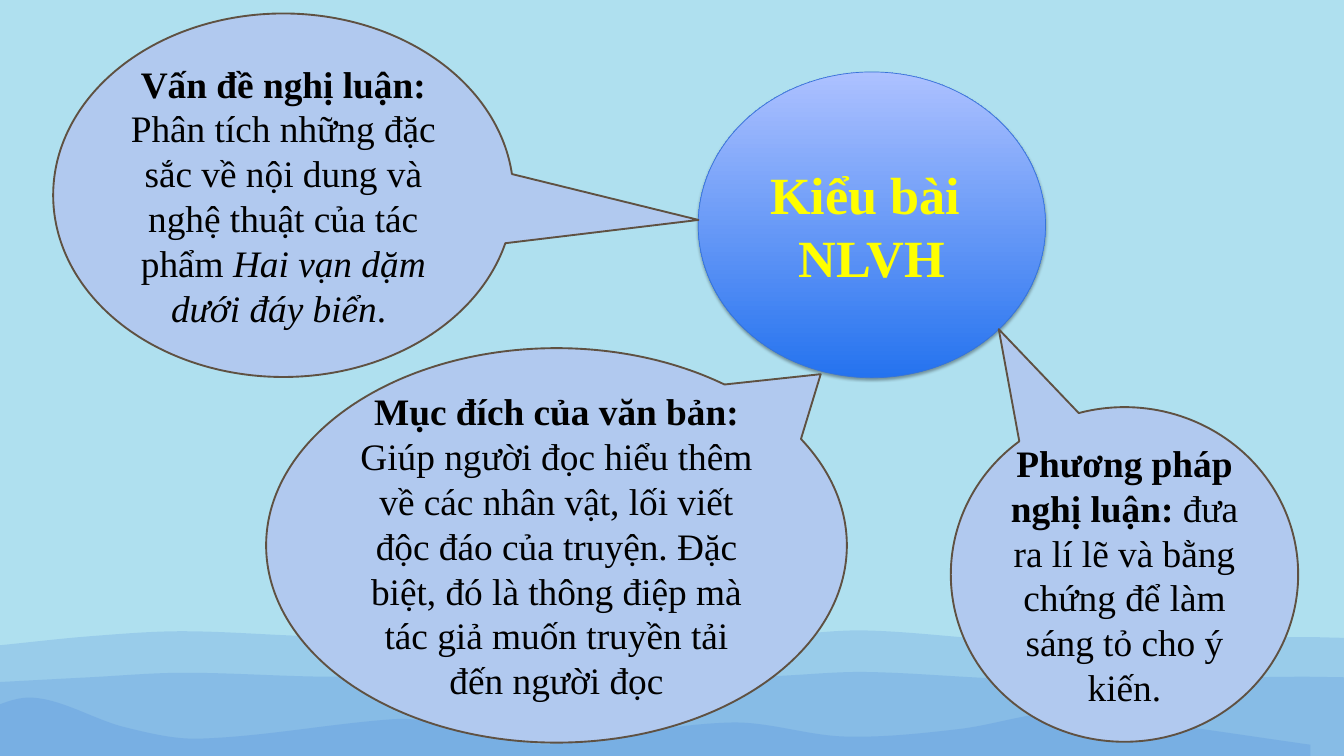
from lxml import etree
from pptx import Presentation
from pptx.dml.color import RGBColor
from pptx.enum import shapes as sh, text as tx
from pptx.oxml import parse_xml
from pptx.oxml.ns import nsdecls, qn
from pptx.util import Cm, Pt

SKY = RGBColor(0xAF, 0xE0, 0xEF)
SEA = RGBColor(0x3C, 0x78, 0xD8)
BUBBLE = RGBColor(0xB1, 0xC9, 0xEF)
BROWN = RGBColor(0x5F, 0x51, 0x42)
DEEP_BLUE = RGBColor(0x25, 0x73, 0xEF)
PALE_BLUE = RGBColor(0xAD, 0xC1, 0xFF)
RIM_BLUE = RGBColor(0x37, 0x74, 0xD7)
YELLOW = RGBColor(0xFF, 0xFF, 0x00)
BLACK = RGBColor(0, 0, 0)
FONT = "Times New Roman"

# Each wave: box (left, top, width, height) and crest points inside it, in cm
WAVES = [
    ((0, 23.83, 50.8, 4.75),
     [(0, 0.56), (3.4, 0.22), (6.9, 0.03), (12.5, 0.23), (16.8, 0.08),
      (19.3, 0.15), (25.2, 0.61), (26.4, 0.56), (29.8, 0.18), (32.7, 0),
      (37.8, 0.36), (40.7, 0.43), (44, 0.38), (49, 0.25), (50.8, 0.28)]),
    ((-1.27, 26.37, 50.8, 2.21),
     [(0, 0.74), (2.5, 0), (6, 1.12), (8.8, 1.55), (16.2, 0.81),
      (17.7, 0.94), (21.4, 1.73), (22.3, 1.75), (28.9, 0.94), (33.2, 1.47),
      (37.5, 1.19), (40.4, 0.64), (41.4, 0.58), (44.3, 0.86), (50.8, 1.78)]),
    ((0, 25.4, 50.8, 3.18),
     [(0, 0.38), (3.4, 0.2), (6.9, 0.03), (12.5, 0.18), (16.8, 0.08),
      (19.3, 0.13), (25.2, 0.41), (29.8, 0.13), (32.7, 0), (37.8, 0.25),
      (40.7, 0.3), (44, 0.25), (49, 0.18), (50.8, 0.2)]),
]

# Each callout: box, tail tip (share of the box from its centre), runs (text, bold, italic)
CALLOUTS = [
    ((2.01, 0.51, 17.4, 13.74), (0.902, 0.068),
     [("Vấn đề nghị luận: ", True, False),
      ("Phân tích những đặc sắc về nội dung và nghệ thuật của tác phẩm ", False, False),
      ("Hai vạn dặm dưới đáy biển", False, True),
      (". ", False, False)]),
    ((35.94, 15.39, 13.13, 12.65), (-0.362, -0.733),
     [("Phương pháp nghị luận: ", True, False),
      ("đưa ra lí lẽ và bằng chứng để làm sáng tỏ cho ý kiến.", False, False)]),
    ((10.06, 13.16, 21.95, 14.91), (0.455, -0.434),
     [("Mục đích của văn bản: ", True, False),
      ("Giúp người đọc hiểu thêm về các nhân vật, lối viết độc đáo của truyện. "
       "Đặc biệt, đó là thông điệp mà tác giả muốn truyền tải đến người đọc",
       False, False)]),
]


def crest_slopes(crest):
    """Slope at each crest point, taken from its two neighbours."""
    before = crest[:1] + crest[:-1]
    after = crest[1:] + crest[-1:]
    return [(y1 - y0) / (x1 - x0) for (x0, y0), (x1, y1) in zip(before, after)]


def round_crest(wave, crest):
    """Turn the straight crest segments of the outline into Bézier curves."""
    slopes = crest_slopes(crest)
    segments = list(wave._element.iter(qn("a:lnTo")))
    for i, segment in enumerate(segments[:len(crest) - 1]):
        (x0, y0), (x1, y1) = crest[i], crest[i + 1]
        third = (x1 - x0) / 3
        handles = [(x0 + third, y0 + third * slopes[i]),
                   (x1 - third, y1 - third * slopes[i + 1])]
        segment.tag = qn("a:cubicBezTo")
        for position, (x, y) in enumerate(handles):
            handle = etree.Element(qn("a:pt"), x=str(Cm(x)), y=str(Cm(y)))
            segment.insert(position, handle)


def add_wave(slide, box, crest):
    left, top, width, height = box
    outline = crest + [(width, height), (0, height)]
    (x0, y0), *rest = [(Cm(left + x), Cm(top + y)) for x, y in outline]
    builder = slide.shapes.build_freeform(x0, y0)
    builder.add_line_segments(rest, close=True)
    wave = builder.convert_to_shape()
    round_crest(wave, crest)
    wave.shadow.inherit = False
    wave.fill.solid()
    wave.fill.fore_color.rgb = SEA
    colour = wave._element.spPr.find(qn("a:solidFill"))[0]
    etree.SubElement(colour, qn("a:alpha"), val="19000")
    wave.line.fill.background()


def add_bubble(slide, preset, box, outline, outline_width):
    bubble = slide.shapes.add_shape(preset, *map(Cm, box))
    bubble.shadow.inherit = False
    bubble.line.color.rgb = outline
    bubble.line.width = Pt(outline_width)
    bubble.text_frame.word_wrap = True
    bubble.text_frame.vertical_anchor = tx.MSO_ANCHOR.MIDDLE
    return bubble


def add_run(paragraph, words, size, colour, bold, italic=False):
    paragraph.alignment = tx.PP_ALIGN.CENTER
    run = paragraph.add_run()
    run.text = words
    font = run.font
    font.name, font.size, font.bold, font.italic = FONT, Pt(size), bold, italic
    font.color.rgb = colour


def add_topic(slide, box, lines):
    topic = add_bubble(slide, sh.MSO_SHAPE.OVAL, box, RIM_BLUE, 0.75)
    topic.fill.gradient()
    topic.fill.gradient_angle = 90
    for stop, colour in zip(topic.fill.gradient_stops, (DEEP_BLUE, PALE_BLUE)):
        stop.color.rgb = colour
    effects = topic._element.spPr.find(qn("a:effectLst"))
    effects.append(parse_xml(
        f'<a:outerShdw {nsdecls("a")} blurRad="{Pt(3.1)}" dist="{Pt(1.8)}" '
        'dir="5400000" rotWithShape="0"><a:srgbClr val="000000">'
        '<a:alpha val="35000"/></a:srgbClr></a:outerShdw>'))
    frame = topic.text_frame
    for i, line in enumerate(lines):
        paragraph = frame.add_paragraph() if i else frame.paragraphs[0]
        add_run(paragraph, line, 56, YELLOW, True)


def add_callout(slide, box, tip, runs):
    callout = add_bubble(slide, sh.MSO_SHAPE.OVAL_CALLOUT, box, BROWN, 2)
    callout.adjustments[0], callout.adjustments[1] = tip
    callout.fill.solid()
    callout.fill.fore_color.rgb = BUBBLE
    for words, bold, italic in runs:
        add_run(callout.text_frame.paragraphs[0], words, 40, BLACK, bold, italic)


def main():
    deck = Presentation()
    deck.slide_width, deck.slide_height = Cm(50.8), Cm(28.575)
    slide = deck.slides.add_slide(deck.slide_layouts[6])
    slide.background.fill.solid()
    slide.background.fill.fore_color.rgb = SKY
    for box, crest in WAVES:
        add_wave(slide, box, crest)
    add_topic(slide, (26.39, 2.72, 13.13, 11.56), ["Kiểu bài ", "NLVH"])
    for box, tip, runs in CALLOUTS:
        add_callout(slide, box, tip, runs)
    deck.save("out.pptx")


if __name__ == "__main__":
    main()
